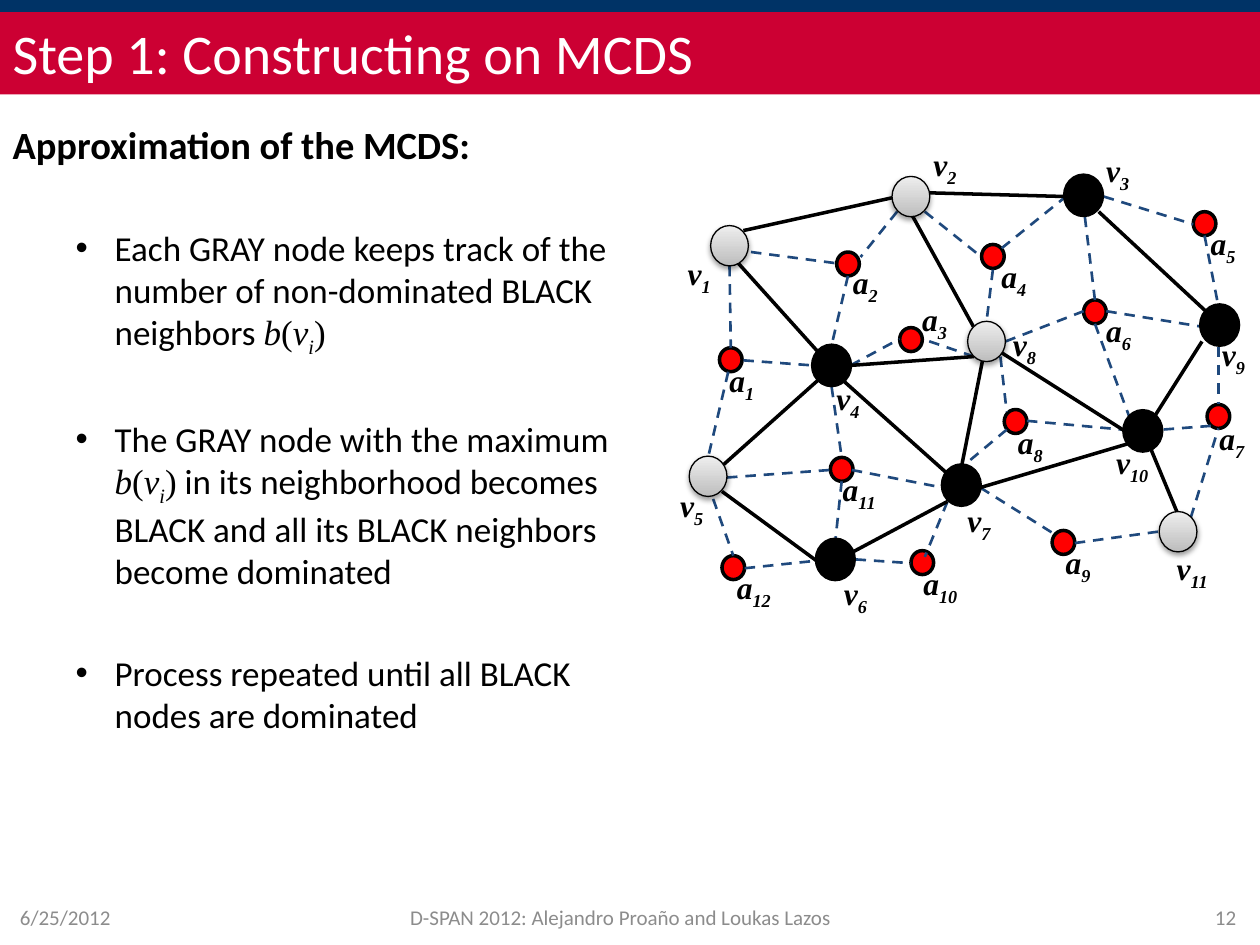
from lxml import etree
from pptx import Presentation
from pptx.dml.color import RGBColor
from pptx.enum.dml import MSO_LINE
from pptx.enum.shapes import MSO_CONNECTOR, MSO_SHAPE
from pptx.enum.text import MSO_ANCHOR, MSO_AUTO_SIZE, PP_ALIGN
from pptx.oxml.ns import qn
from pptx.util import Pt

PX = 9144
OVAL, RECT, STRAIGHT = MSO_SHAPE.OVAL, MSO_SHAPE.RECTANGLE, MSO_CONNECTOR.STRAIGHT
DASH = MSO_LINE.DASH
TOP, MIDDLE = MSO_ANCHOR.TOP, MSO_ANCHOR.MIDDLE
LEFT, CENTER, RIGHT = PP_ALIGN.LEFT, PP_ALIGN.CENTER, PP_ALIGN.RIGHT
NO_FIT = MSO_AUTO_SIZE.NONE

BLACK = RGBColor(0x00, 0x00, 0x00)
WHITE = RGBColor(0xFF, 0xFF, 0xFF)
RED = RGBColor(0xFF, 0x00, 0x00)
CRIMSON = RGBColor(0xCC, 0x00, 0x33)
NAVY = RGBColor(0x00, 0x33, 0x66)
BLUE = RGBColor(0x1F, 0x49, 0x7D)
FOOTER_GRAY = RGBColor(0x8C, 0x8C, 0x8C)
GRAY_STOPS = (RGBColor(0xBD, 0xBD, 0xBD), RGBColor(0xEE, 0xEE, 0xEE))
SANS, SERIF = "Calibri", "Times New Roman"

MATH = dict(font=SERIF, italic=True)
B_VI = [("b", MATH), ("(", dict(font=SERIF)), ("v", MATH),
        ("i", dict(MATH, sub=True)), (")", dict(font=SERIF))]
BULLETS = [
    [("Each GRAY node keeps track of the number of non-dominated BLACK neighbors ", {}), *B_VI],
    [("The GRAY node with the maximum ", {}), *B_VI,
     (" in its neighborhood becomes BLACK and all its BLACK neighbors become dominated", {})],
    [("Process repeated until all BLACK nodes are dominated", {})],
]
FOOTERS = [
    ((6, 708, 233, 40), "6/25/2012", LEFT),
    ((307, 708, 371, 40), "D-SPAN 2012: Alejandro Proaño and Loukas Lazos", CENTER),
    ((758, 708, 233, 40), "12", RIGHT),
]

RED_NODES = [(571, 276), (664, 200), (714, 260), (779, 194), (947, 168), (860, 238),
             (958, 321), (797, 325), (835, 421), (723, 437), (659, 363), (573, 441)]
GRAY_NODES = [(564, 179), (708, 140), (547, 362), (768, 255), (920, 406)]
BLACK_NODES = [(845, 139), (645, 274), (648, 428), (748, 369), (953, 242), (892, 326)]
LABELS = {
    "a": [(569, 282), (667, 204), (722, 233), (785, 199), (951, 173), (868, 242),
          (958, 328), (798, 331), (836, 426), (723, 443), (659, 368), (575, 446)],
    "v": [(536, 197), (731, 110), (868, 115), (654, 296), (530, 381), (660, 451),
          (758, 393), (794, 253), (960, 261), (876, 347), (924, 431)],
}
DASHED_LINKS = [
    (956, 187, 967, 243), (876, 156, 947, 178), (788, 214, 783, 255), (815, 334, 891, 341),
    (878, 247, 952, 259), (861, 172, 869, 238), (961, 338, 922, 341), (967, 275, 967, 321),
    (752, 398, 734, 442), (679, 444, 723, 447), (798, 271, 860, 247), (795, 197, 846, 156),
    (734, 168, 779, 204), (853, 431, 919, 422), (778, 387, 837, 424), (673, 219, 660, 274),
    (675, 290, 714, 269), (773, 283, 732, 269), (799, 341, 763, 371), (794, 283, 799, 327),
    (590, 286, 645, 290), (578, 295, 562, 363), (579, 211, 580, 276), (712, 168, 683, 204),
    (596, 200, 664, 209), (676, 373, 748, 387), (668, 382, 663, 429), (577, 379, 659, 373),
    (566, 396, 582, 441), (660, 307, 668, 363), (869, 257, 896, 330), (591, 451, 648, 445),
    (945, 411, 967, 340),
]
SOLID_LINKS = [
    (590, 183, 708, 157), (586, 209, 649, 279), (574, 369, 649, 302), (573, 390, 648, 445),
    (736, 153, 846, 156), (675, 290, 773, 283), (724, 171, 773, 260), (795, 280, 891, 341),
    (677, 438, 752, 398), (778, 387, 896, 352), (912, 353, 934, 406), (916, 331, 954, 271),
    (872, 168, 957, 247), (763, 371, 780, 285), (668, 301, 752, 376),
]


def add_text(p, text, size=20, font=SANS, color=BLACK, bold=False, italic=False, sub=False):
    r = p.add_run()
    r.text = text
    f = r.font
    f.size, f.name, f.bold, f.italic = Pt(size), font, bold, italic
    f.color.rgb = color
    if sub:
        r._r.get_or_add_rPr().set("baseline", "-25000")


class Deck:
    def __init__(self):
        self.prs = Presentation()
        self.prs.slide_width, self.prs.slide_height = 1000 * PX, 750 * PX
        self.s = self.prs.slides.add_slide(self.prs.slide_layouts[1])

    def place(self, sp, box):
        sp.left, sp.top, sp.width, sp.height = (v * PX for v in box)

    def shape(self, kind, box, fill, line=BLACK, weight=2):
        sp = self.s.shapes.add_shape(kind, *(v * PX for v in box))
        sp.shadow.inherit = False
        if fill is not None:
            sp.fill.solid()
            sp.fill.fore_color.rgb = fill
        sp.line.color.rgb = line
        sp.line.width = Pt(weight)
        return sp

    def gray_node(self, x, y):
        sp = self.shape(OVAL, (x, y, 30, 32), None, weight=0.75)
        sp.fill.gradient()
        sp.fill.gradient_angle = 90
        for stop, color in zip(sp.fill.gradient_stops, GRAY_STOPS):
            stop.color.rgb = color
        effects = sp.element.spPr.find(qn("a:effectLst"))
        shadow = etree.SubElement(effects, qn("a:outerShdw"), blurRad=str(Pt(3.1)),
                                  dist=str(Pt(1.6)), dir="5400000", rotWithShape="0")
        tint = etree.SubElement(shadow, qn("a:srgbClr"), val="000000")
        etree.SubElement(tint, qn("a:alpha"), val="38000")

    def link(self, ends, color, weight, dash=None):
        c = self.s.shapes.add_connector(STRAIGHT, *(v * PX for v in ends))
        c.line.color.rgb = color
        c.line.width = Pt(weight)
        c.line.dash_style = dash
        etree.SubElement(c.element.spPr, qn("a:effectLst"))

    def textbox(self, box, runs, align=LEFT, anchor=TOP):
        tf = self.s.shapes.add_textbox(*(v * PX for v in box)).text_frame
        tf.word_wrap = True
        tf.vertical_anchor = anchor
        p = tf.paragraphs[0]
        p.alignment = align
        for text, fmt in runs:
            add_text(p, text, **fmt)

    def title(self, box, text):
        sp = self.s.shapes.title
        self.place(sp, box)
        sp.fill.solid()
        sp.fill.fore_color.rgb = CRIMSON
        tf = sp.text_frame
        tf.auto_size, tf.vertical_anchor = NO_FIT, MIDDLE
        p = tf.paragraphs[0]
        p.alignment = LEFT
        add_text(p, text, size=32, color=WHITE)

    def body(self, box, heading, bullets):
        sp = self.s.placeholders[1]
        self.place(sp, box)
        tf = sp.text_frame
        tf.auto_size, tf.vertical_anchor = NO_FIT, TOP
        p = tf.paragraphs[0]
        self.bullet(p, 38, 38)
        add_text(p, heading, size=22, bold=True)
        for runs in bullets:
            p = tf.add_paragraph()
            p.level = 1
            p.space_before = Pt(34)
            self.bullet(p, 81, 31, "•")
            for text, fmt in runs:
                add_text(p, text, **fmt)

    def bullet(self, p, margin, hang, char=None):
        pPr = p._p.get_or_add_pPr()
        pPr.set("marL", str(margin * PX))
        pPr.set("indent", str(-hang * PX))
        if char:
            etree.SubElement(pPr, qn("a:buChar"), char=char)
        else:
            etree.SubElement(pPr, qn("a:buNone"))


def main():
    deck = Deck()
    deck.shape(RECT, (0, 0, 1000, 8), NAVY, NAVY)
    deck.title((0, 8, 1000, 67), "Step 1: Constructing on MCDS")
    deck.body((0, 91, 522, 542), "Approximation of the MCDS:", BULLETS)
    for box, text, align in FOOTERS:
        deck.textbox(box, [(text, dict(size=12, color=FOOTER_GRAY))], align, MIDDLE)

    for x, y in RED_NODES:
        deck.shape(OVAL, (x, y, 18, 19), RED)
    for ends in DASHED_LINKS:
        deck.link(ends, BLUE, 1.5, DASH)
    for ends in SOLID_LINKS:
        deck.link(ends, BLACK, 2)
    for x, y in BLACK_NODES:
        deck.shape(OVAL, (x, y, 30, 32), BLACK)
    for x, y in GRAY_NODES:
        deck.gray_node(x, y)

    label = dict(MATH, size=18, bold=True)
    for letter, spots in LABELS.items():
        for number, (x, y) in enumerate(spots, 1):
            width = 44 if number < 10 else 53
            deck.textbox((x, y, width, 40),
                         [(letter, label), (str(number), dict(label, sub=True))])
    deck.prs.save("out.pptx")


if __name__ == "__main__":
    main()
